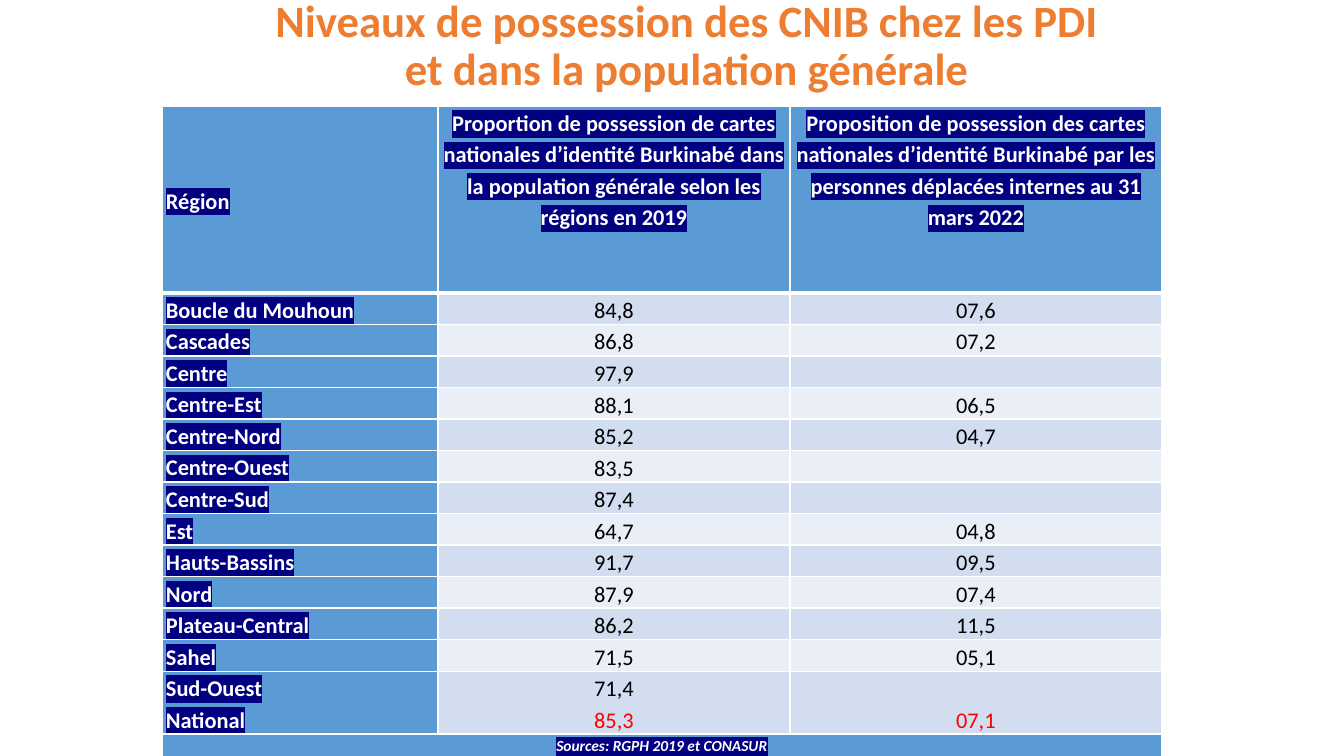
import pptx
import pptx.dml.color
import pptx.enum.text
import pptx.oxml
import pptx.oxml.ns
import pptx.util

EMU_PER_PX = 914400 / 100.8
FONT = "Calibri"
RGB = pptx.dml.color.RGBColor
ORANGE = RGB(0xED, 0x7D, 0x31)
BLUE = RGB(0x5B, 0x9B, 0xD5)
BAND_DARK = RGB(0xD2, 0xDE, 0xEF)
BAND_LIGHT = RGB(0xEA, 0xEF, 0xF7)
NAVY = RGB(0x00, 0x00, 0x80)
WHITE = RGB(0xFF, 0xFF, 0xFF)
BLACK = RGB(0x00, 0x00, 0x00)
RED = RGB(0xFF, 0x00, 0x00)
ALIGN = pptx.enum.text.PP_ALIGN
ANCHOR = pptx.enum.text.MSO_ANCHOR

TITLE = "Niveaux de possession des CNIB chez les PDI et dans la population générale"
HEADINGS = (
    "Région",
    "Proportion de possession de cartes nationales d’identité Burkinabé "
    "dans la population générale selon les régions en 2019",
    "Proposition de possession des cartes nationales d’identité Burkinabé "
    "par les personnes déplacées internes au 31 mars 2022",
)
REGIONS = (
    ("Boucle du Mouhoun", "84,8", "07,6"),
    ("Cascades", "86,8", "07,2"),
    ("Centre", "97,9", ""),
    ("Centre-Est", "88,1", "06,5"),
    ("Centre-Nord", "85,2", "04,7"),
    ("Centre-Ouest", "83,5", ""),
    ("Centre-Sud", "87,4", ""),
    ("Est", "64,7", "04,8"),
    ("Hauts-Bassins", "91,7", "09,5"),
    ("Nord", "87,9", "07,4"),
    ("Plateau-Central", "86,2", "11,5"),
    ("Sahel", "71,5", "05,1"),
    ("Sud-Ouest\nNational", "71,4\n85,3", "07,1"),
)
SOURCES = "Sources: RGPH 2019 et CONASUR"
COLUMN_WIDTHS = (276, 352, 372)
ROW_HEIGHTS = (187,) + (29,) * 12 + (61, 29)


def px(length):
    return pptx.util.Emu(round(length * EMU_PER_PX))


def format_run(run, size, color, bold):
    run.font.name = FONT
    run.font.size = pptx.util.Pt(size)
    run.font.bold = bold
    run.font.color.rgb = color


def highlight(run):
    mark = pptx.oxml.parse_xml(
        f'<a:highlight {pptx.oxml.ns.nsdecls("a")}><a:srgbClr val="{NAVY}"/></a:highlight>'
    )
    run.font.fill._xPr.find(pptx.oxml.ns.qn("a:solidFill")).addnext(mark)


def set_borders(cell, top=1, bottom=1):
    properties = cell._tc.get_or_add_tcPr()
    for position, (side, points) in enumerate(
        (("L", 1), ("R", 1), ("T", top), ("B", bottom))
    ):
        border = pptx.oxml.parse_xml(
            f'<a:ln{side} {pptx.oxml.ns.nsdecls("a")} w="{points * 12700}">'
            f'<a:solidFill><a:srgbClr val="{WHITE}"/></a:solidFill></a:ln{side}>'
        )
        properties.insert(position, border)


def fill_cell(cell, text, fill, align, anchor, size=16, color=BLACK, marked=False):
    cell.fill.solid()
    cell.fill.fore_color.rgb = fill
    cell.margin_left = cell.margin_right = px(4)
    cell.margin_top = cell.margin_bottom = 0
    cell.vertical_anchor = anchor
    if not text:
        return
    cell.text_frame.text = text
    for paragraph in cell.text_frame.paragraphs:
        paragraph.alignment = align
        paragraph.line_spacing = 1.15
        for run in paragraph.runs:
            format_run(run, size, color, marked)
            if marked:
                highlight(run)


def fill_label(cell, text, align, anchor=ANCHOR.TOP, size=16):
    fill_cell(cell, text, BLUE, align, anchor, size, WHITE, marked=True)


def add_title(slide):
    title = slide.shapes.title
    title.left, title.top, title.width, title.height = map(px, (253, 0, 868, 94))
    frame = title.text_frame
    frame.text = TITLE
    frame.word_wrap = True
    frame.auto_size = pptx.enum.text.MSO_AUTO_SIZE.NONE
    frame.vertical_anchor = ANCHOR.MIDDLE
    heading = frame.paragraphs[0]
    heading.alignment = ALIGN.CENTER
    heading.line_spacing = 0.9
    format_run(heading.runs[0], 32, ORANGE, True)


def add_possession_table(slide):
    table = slide.shapes.add_table(
        len(ROW_HEIGHTS), len(COLUMN_WIDTHS),
        px(162), px(106), px(sum(COLUMN_WIDTHS)), px(sum(ROW_HEIGHTS)),
    ).table
    for column, width in zip(table.columns, COLUMN_WIDTHS):
        column.width = px(width)
    for row, height in zip(table.rows, ROW_HEIGHTS):
        row.height = px(height)

    fill_label(table.cell(0, 0), HEADINGS[0], ALIGN.LEFT, ANCHOR.MIDDLE)
    for column in (1, 2):
        fill_label(table.cell(0, column), HEADINGS[column], ALIGN.CENTER)

    for row, (region, *shares) in enumerate(REGIONS, start=1):
        fill_label(table.cell(row, 0), region, ALIGN.LEFT)
        band = BAND_DARK if row % 2 else BAND_LIGHT
        for column, share in enumerate(shares, start=1):
            fill_cell(table.cell(row, column), share, band, ALIGN.CENTER, ANCHOR.BOTTOM)

    national_row = len(REGIONS)
    for column in (1, 2):
        national = table.cell(national_row, column).text_frame.paragraphs[-1]
        national.runs[0].font.color.rgb = RED

    sources_row = national_row + 1
    sources = table.cell(sources_row, 0)
    sources.merge(table.cell(sources_row, 2))
    fill_label(sources, SOURCES, ALIGN.CENTER, size=11)
    sources.text_frame.paragraphs[0].runs[0].font.italic = True

    for row in range(len(ROW_HEIGHTS)):
        for column in range(len(COLUMN_WIDTHS)):
            set_borders(
                table.cell(row, column),
                top=3 if row == 1 else 1,
                bottom=3 if row == 0 else 1,
            )


def main():
    presentation = pptx.Presentation()
    presentation.slide_width = px(1344)
    presentation.slide_height = px(756)
    slide = presentation.slides.add_slide(presentation.slide_layouts[5])
    add_title(slide)
    add_possession_table(slide)
    presentation.save("out.pptx")


if __name__ == "__main__":
    main()
